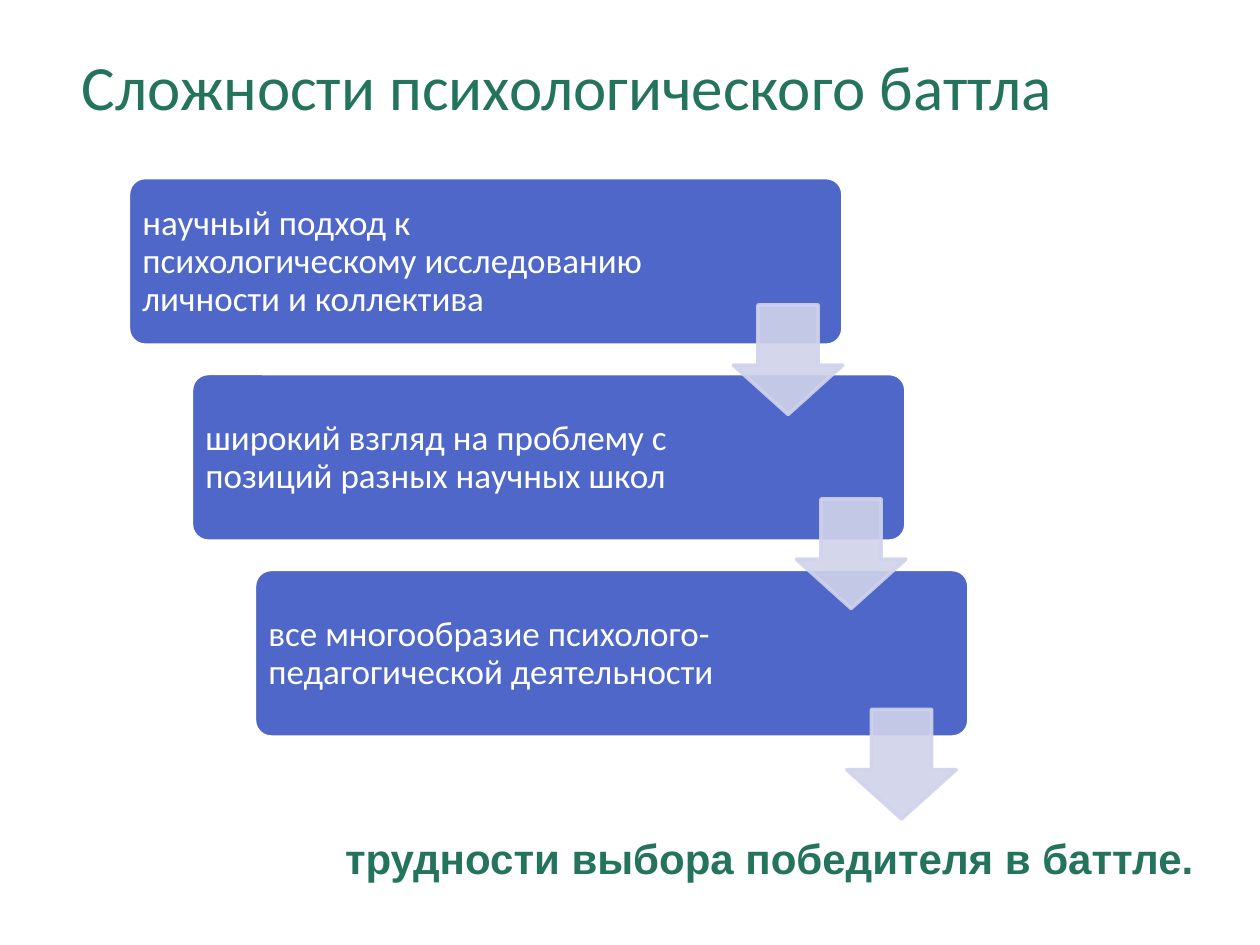
from lxml import etree
from pptx import Presentation
from pptx.dml.color import RGBColor
from pptx.enum.shapes import MSO_SHAPE
from pptx.enum.text import MSO_ANCHOR
from pptx.oxml.ns import qn
from pptx.util import Inches, Pt

ROUNDED = MSO_SHAPE.ROUNDED_RECTANGLE
DOWN_ARROW = MSO_SHAPE.DOWN_ARROW
TOP = MSO_ANCHOR.TOP
MIDDLE = MSO_ANCHOR.MIDDLE

GREEN = "23735D"
BLUE = "4E67C8"
LILAC = "D0D3EB"
WHITE = "FFFFFF"

STEPS = [
    "научный подход к психологическому исследованию личности и коллектива",
    "широкий взгляд на проблему с позиций разных научных школ",
    "все многообразие психолого-педагогической деятельности",
]
STEP_LEFT, STEP_TOP = 1.02, 1.41
STEP_RIGHT, STEP_DOWN = 0.5, 1.555
ARROW_POSITIONS = [(5.82, 2.42), (6.32, 3.96), (6.72, 5.63)]


def color(hex_value):
    return RGBColor.from_string(hex_value)


def set_opacity(fill_color, percent):
    for element in fill_color.iter(qn("a:srgbClr")):
        alpha = etree.SubElement(element, qn("a:alpha"))
        alpha.set("val", str(percent * 1000))


def add_block(slide, kind, box, adjustments, fill, line):
    shape = slide.shapes.add_shape(kind, *map(Inches, box))
    shape.shadow.inherit = False
    for index, value in enumerate(adjustments):
        shape.adjustments[index] = value
    shape.fill.solid()
    shape.fill.fore_color.rgb = color(fill)
    shape.line.color.rgb = color(line)
    shape.line.width = Pt(2)
    return shape


def add_text(slide, box, text, size, font, hex_value, anchor=MIDDLE, bold=False):
    text_frame = slide.shapes.add_textbox(*map(Inches, box)).text_frame
    text_frame.word_wrap = True
    text_frame.vertical_anchor = anchor
    text_frame.text = text
    run_font = text_frame.paragraphs[0].runs[0].font
    run_font.size = Pt(size)
    run_font.name = font
    run_font.bold = bold
    run_font.color.rgb = color(hex_value)
    return text_frame


def add_step(slide, index, text):
    left = STEP_LEFT + index * STEP_RIGHT
    top = STEP_TOP + index * STEP_DOWN
    add_block(slide, ROUNDED, (left, top, 5.67, 1.33), [0.1], BLUE, WHITE)
    label_box = (left + 0.03, top + 0.04, 4.22, 1.26)
    text_frame = add_text(slide, label_box, text, 20, "Calibri", WHITE)
    text_frame.margin_left = text_frame.margin_right = Inches(0.08)
    text_frame.margin_top = text_frame.margin_bottom = Inches(0.08)
    text_frame.paragraphs[0].line_spacing = 0.9


def add_arrow(slide, left, top):
    # Adjustments of a down arrow: head length, then shaft width
    arrow = add_block(slide, DOWN_ARROW, (left, top, 0.87, 0.87), [0.55, 0.45],
                      LILAC, LILAC)
    # The preset stores the shaft start first
    arrow.adjustments[0], arrow.adjustments[1] = 0.55, 0.45
    set_opacity(arrow.element.spPr, 90)


def main():
    presentation = Presentation()
    presentation.slide_width = Inches(10)
    presentation.slide_height = Inches(7.5)
    slide = presentation.slides.add_slide(presentation.slide_layouts[6])

    # Title
    add_text(slide, (0.55, 0.16, 8.71, 1.04), "Сложности психологического баттла",
             36, "Calibri", GREEN)

    # Staircase of difficulties, with the arrows on top
    for index, text in enumerate(STEPS):
        add_step(slide, index, text)
    for left, top in ARROW_POSITIONS:
        add_arrow(slide, left, top)

    # Conclusion
    add_text(slide, (2.64, 6.56, 7.05, 0.5), "трудности выбора победителя в баттле.",
             24, "Arial", GREEN, anchor=TOP, bold=True)

    presentation.save("out.pptx")


if __name__ == "__main__":
    main()
